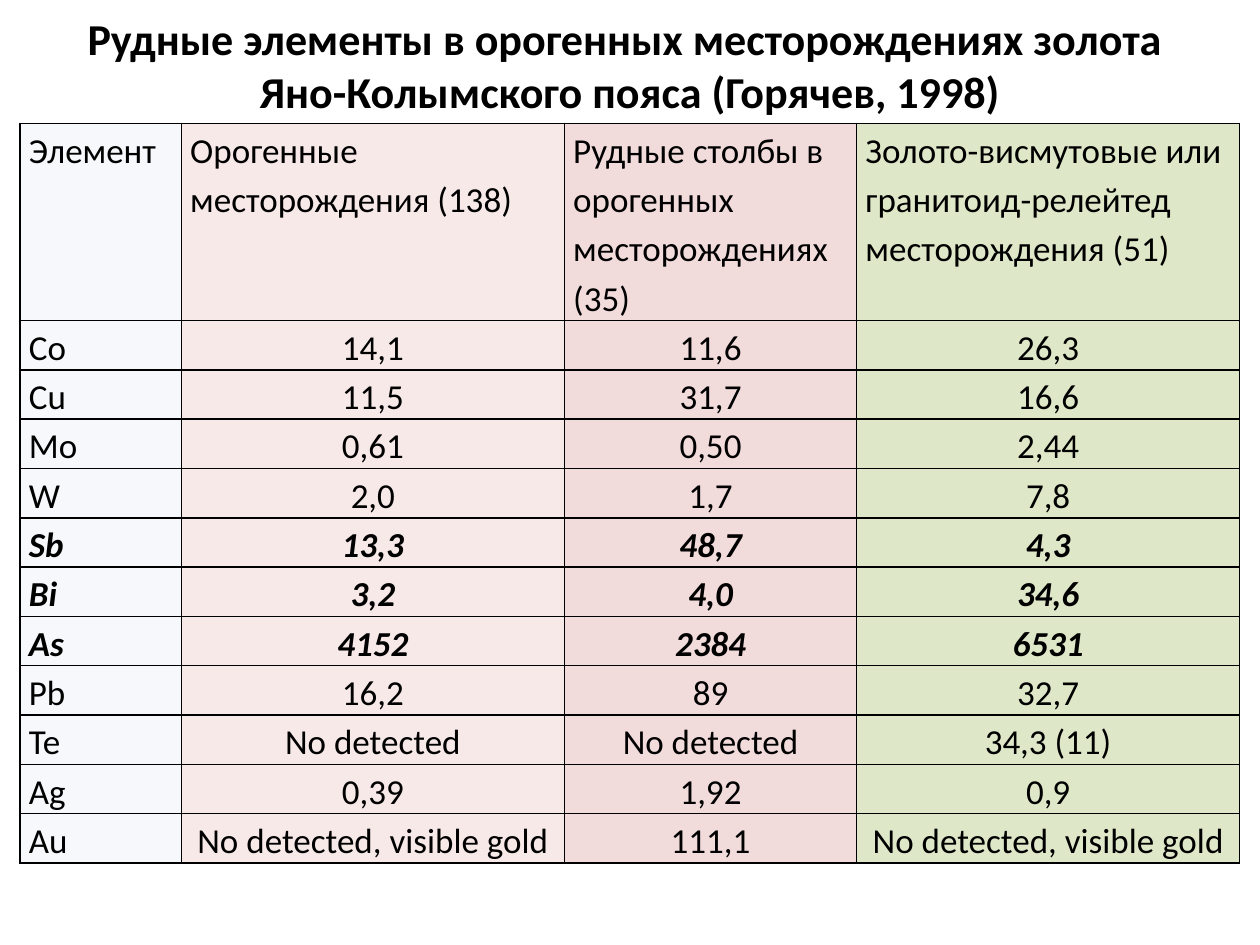
from lxml.etree import SubElement
from pptx import Presentation
from pptx.dml.color import RGBColor
from pptx.enum.text import MSO_ANCHOR, MSO_AUTO_SIZE, PP_ALIGN
from pptx.oxml import parse_xml
from pptx.oxml.ns import nsdecls, qn
from pptx.util import Inches, Pt

TITLE_LINES = ["Рудные элементы в орогенных месторождениях золота ",
               "Яно-Колымского пояса (Горячев, 1998)"]
COLUMNS = [(1.28, "DCE6F2", 25), (3.04, "F2DCDB", 61),
           (2.32, "E6B9B8", 50), (3.04, "C3D69B", 54)]
HEADER_HEIGHT, ROW_HEIGHT = 1.56, 0.39
EMPHASIZED = {"Sb", "Bi", "As"}
ROWS = [
    ["Элемент", "Орогенные месторождения (138)",
     "Рудные столбы в орогенных месторождениях (35)",
     "Золото-висмутовые или гранитоид-релейтед месторождения (51)"],
    ["Co", "14,1", "11,6", "26,3"],
    ["Cu", "11,5", "31,7", "16,6"],
    ["Mo", "0,61", "0,50", "2,44"],
    ["W", "2,0", "1,7", "7,8"],
    ["Sb", "13,3", "48,7", "4,3"],
    ["Bi", "3,2", "4,0", "34,6"],
    ["As", "4152", "2384", "6531"],
    ["Pb", "16,2", "89", "32,7"],
    ["Te", "No detected", "No detected", "34,3 (11)"],
    ["Ag", "0,39", "1,92", "0,9"],
    ["Au", "No detected, visible gold", "111,1", "No detected, visible gold"],
]


def color(value):
    """Return the colour for a hex string."""
    return RGBColor.from_string(value)


def add_span(para, text, size, bold=False, italic=False):
    """Add one formatted run to a paragraph."""
    span = para.add_run()
    span.text = text
    span.font.name = "Calibri"
    span.font.size = Pt(size)
    span.font.bold = bold
    span.font.italic = italic
    span.font.color.rgb = color("000000")


def place_title(page, left, top, width, height):
    """Place and format the title placeholder."""
    title = page.shapes.title
    title.left, title.top = Inches(left), Inches(top)
    title.width, title.height = Inches(width), Inches(height)
    frame = title.text_frame
    frame.word_wrap = True
    frame.auto_size = MSO_AUTO_SIZE.NONE
    frame.vertical_anchor = MSO_ANCHOR.MIDDLE
    para = frame.paragraphs[0]
    para.alignment = PP_ALIGN.CENTER
    for index, line in enumerate(TITLE_LINES):
        if index:
            para.add_line_break()
        add_span(para, line, 25.2, bold=True)


def style_cell(cell, fill, opacity):
    """Set the margins, borders and translucent fill of a cell."""
    cell.margin_left = cell.margin_right = Inches(0.07)
    cell.margin_top = cell.margin_bottom = 0
    cell.vertical_anchor = MSO_ANCHOR.TOP
    properties = cell._tc.get_or_add_tcPr()
    for side in ("lnL", "lnR", "lnT", "lnB"):
        properties.append(parse_xml(
            f'<a:{side} {nsdecls("a")} w="{Pt(1)}"><a:solidFill>'
            f'<a:srgbClr val="000000"/></a:solidFill></a:{side}>'))
    cell.fill.solid()
    cell.fill.fore_color.rgb = color(fill)
    shade = properties.find(qn("a:solidFill")).find(qn("a:srgbClr"))
    SubElement(shade, qn("a:alpha")).set("val", str(opacity * 1000))


def place_table(page, left, top, width, height):
    """Place the table of ore element contents."""
    table = page.shapes.add_table(
        len(ROWS), len(COLUMNS), Inches(left), Inches(top),
        Inches(width), Inches(height)).table
    table.first_row = table.horz_banding = False
    for column, (column_width, _, _) in zip(table.columns, COLUMNS):
        column.width = Inches(column_width)
    for row_index, texts in enumerate(ROWS):
        table.rows[row_index].height = Inches(ROW_HEIGHT if row_index else HEADER_HEIGHT)
        strong = texts[0] in EMPHASIZED
        for column_index, (text, (_, fill, opacity)) in enumerate(zip(texts, COLUMNS)):
            cell = table.cell(row_index, column_index)
            style_cell(cell, fill, opacity)
            para = cell.text_frame.paragraphs[0]
            para.line_spacing = 1.15
            para.alignment = PP_ALIGN.CENTER if row_index and column_index else PP_ALIGN.LEFT
            add_span(para, text, 20, strong, strong)


def main():
    """Build and save the deck."""
    deck = Presentation()
    deck.slide_width, deck.slide_height = Inches(10), Inches(7.5)
    page = deck.slides.add_slide(deck.slide_layouts[5])
    place_title(page, 0, 0, 10, 1.02)
    table_width = sum(column[0] for column in COLUMNS)
    table_height = HEADER_HEIGHT + ROW_HEIGHT * (len(ROWS) - 1)
    place_table(page, 0.16, 0.98, table_width, table_height)
    deck.save("out.pptx")


if __name__ == "__main__":
    main()
